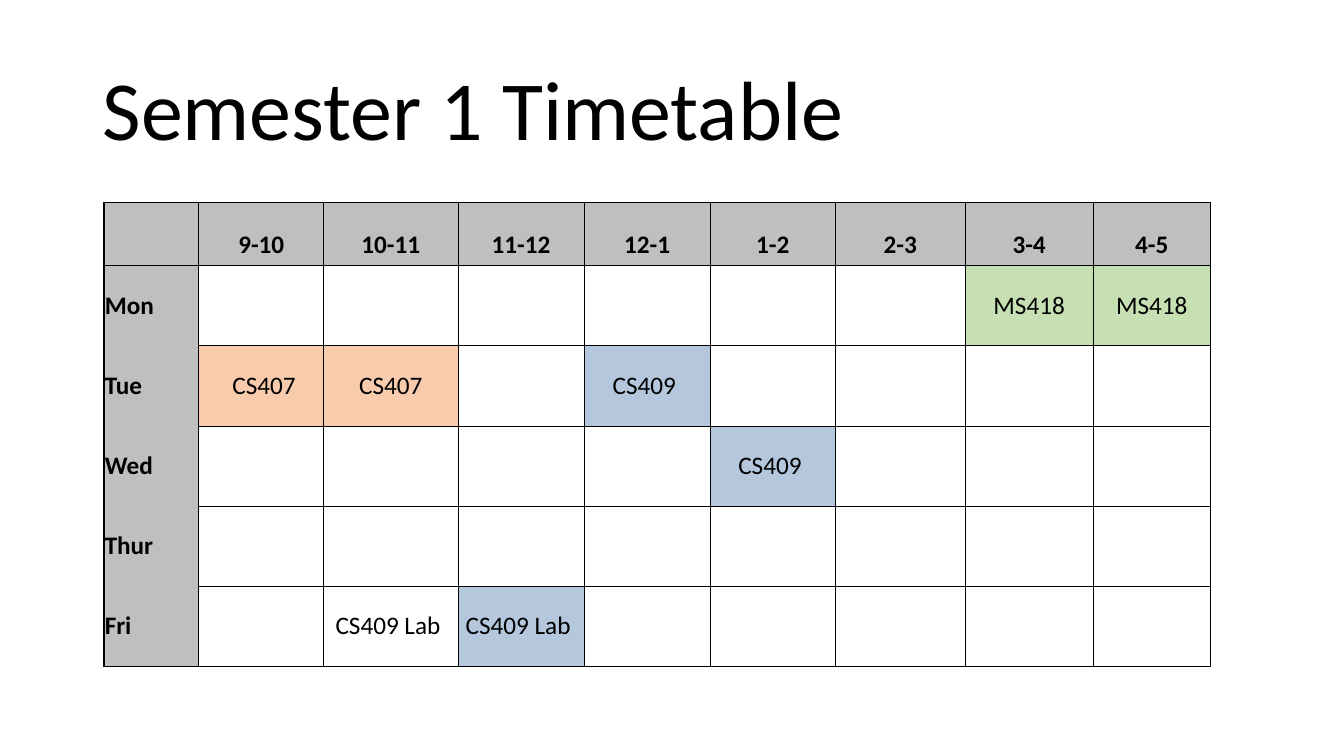
"""Build the Semester 1 timetable slide."""
from lxml import etree
from pptx import Presentation
from pptx.dml.color import RGBColor
from pptx.enum.text import MSO_ANCHOR, PP_ALIGN
from pptx.oxml.ns import qn
from pptx.util import Cm, Pt

LEFT, CENTER = PP_ALIGN.LEFT, PP_ALIGN.CENTER
MIDDLE, BOTTOM = MSO_ANCHOR.MIDDLE, MSO_ANCHOR.BOTTOM
TITLE_ONLY = 5
FONT = "Calibri"
COLORS = {
    "text": "000000",
    "header": "BFBFBF",
    "free": "FFFFFF",
    "MS418": "C6E0B4",
    "CS407": "F8CBAD",
    "CS409": "B4C7DC",
}
HOURS = ["9-10", "10-11", "11-12", "12-1", "1-2", "2-3", "3-4", "4-5"]
DAYS = ["Mon", "Tue", "Wed", "Thur", "Fri"]
CLASSES = {
    ("Mon", "3-4"): ("MS418", "MS418"),
    ("Mon", "4-5"): ("MS418", "MS418"),
    ("Tue", "9-10"): (" CS407", "CS407"),
    ("Tue", "10-11"): ("CS407", "CS407"),
    ("Tue", "12-1"): ("CS409 ", "CS409"),
    ("Wed", "1-2"): ("CS409 ", "CS409"),
    ("Fri", "10-11"): ("CS409 Lab ", "free"),
    ("Fri", "11-12"): ("CS409 Lab ", "CS409"),
}
COLUMN_WIDTHS = [2.39, 3.15, 3.38, 3.18, 3.18, 3.15, 3.28, 3.21, 2.97]
HEADER_HEIGHT, DAY_HEIGHT = 1.58, 2.02
OUTER, INNER, NO_LINE = 0.96, 0.5, 0
CELL_MARGINS = {
    "margin_left": Cm(0.02),
    "margin_right": Cm(0.02),
    "margin_top": Cm(0.13),
    "margin_bottom": Cm(0.13),
}


def apply_format(target, values):
    """Set every attribute in values on target."""
    for attribute, value in values.items():
        setattr(target, attribute, value)


def format_font(font, size, bold):
    """Give a font the slide's typeface and text colour."""
    apply_format(font, {"name": FONT, "size": Pt(size), "bold": bold})
    font.color.rgb = RGBColor.from_string(COLORS["text"])


def add_title(slide, text):
    """Place and fill the title placeholder."""
    title = slide.shapes.title
    apply_format(title, {"left": Cm(2.33), "top": Cm(1.01),
                         "width": Cm(29.21), "height": Cm(3.68)})
    title.text_frame.text = text
    title.text_frame.vertical_anchor = MIDDLE
    heading = title.text_frame.paragraphs[0]
    apply_format(heading, {"alignment": LEFT, "line_spacing": 0.9})
    format_font(heading.runs[0].font, 60, False)


def set_borders(cell, widths):
    """Draw the cell's borders from points per side, zero meaning none."""
    properties = cell._tc.get_or_add_tcPr()
    for position, (side, width) in enumerate(widths.items()):
        line = etree.Element(qn(f"a:ln{side}"), w=str(Pt(width)))
        if width:
            fill = etree.SubElement(line, qn("a:solidFill"))
            etree.SubElement(fill, qn("a:srgbClr"), val=COLORS["text"])
        else:
            etree.SubElement(line, qn("a:noFill"))
        properties.insert(position, line)


def border_widths(row, column):
    """Return heavier outer lines and no lines between the day names."""
    between = NO_LINE if column == 0 else INNER
    return {
        "L": OUTER if column == 0 else INNER,
        "R": OUTER if column == len(HOURS) else INNER,
        "T": OUTER if row == 0 else INNER if row == 1 else between,
        "B": OUTER if row == len(DAYS) else INNER if row == 0 else between,
    }


def cell_content(row, column):
    """Return the text and colour key for a timetable position."""
    if row == 0:
        return (["", *HOURS][column], "header")
    if column == 0:
        return (DAYS[row - 1], "header")
    return CLASSES.get((DAYS[row - 1], HOURS[column - 1]), ("", "free"))


def fill_cell(cell, row, column):
    """Write, colour and outline one timetable cell."""
    text, color = cell_content(row, column)
    apply_format(cell, CELL_MARGINS)
    cell.vertical_anchor = BOTTOM if row == 0 else MIDDLE
    cell.fill.solid()
    cell.fill.fore_color.rgb = RGBColor.from_string(COLORS[color])
    set_borders(cell, border_widths(row, column))
    if text:
        cell.text = text
        label = cell.text_frame.paragraphs[0]
        label.alignment = LEFT if column == 0 else CENTER
        format_font(label.runs[0].font, 18, color == "header")


def add_timetable(slide):
    """Add the grid of days and hours."""
    row_heights = [HEADER_HEIGHT] + [DAY_HEIGHT] * len(DAYS)
    timetable = slide.shapes.add_table(
        len(row_heights), len(COLUMN_WIDTHS), Cm(2.62), Cm(5.11),
        Cm(sum(COLUMN_WIDTHS)), Cm(sum(row_heights))).table
    apply_format(timetable, {"first_row": False, "horz_banding": False})
    for column, width in enumerate(COLUMN_WIDTHS):
        timetable.columns[column].width = Cm(width)
    for row, height in enumerate(row_heights):
        timetable.rows[row].height = Cm(height)
        for column in range(len(COLUMN_WIDTHS)):
            fill_cell(timetable.cell(row, column), row, column)


def main():
    """Build and save the slide."""
    presentation = Presentation()
    apply_format(presentation, {"slide_width": Cm(33.87),
                                "slide_height": Cm(19.05)})
    slide = presentation.slides.add_slide(
        presentation.slide_layouts[TITLE_ONLY])
    add_title(slide, "Semester 1 Timetable")
    add_timetable(slide)
    presentation.save("out.pptx")


if __name__ == "__main__":
    main()
